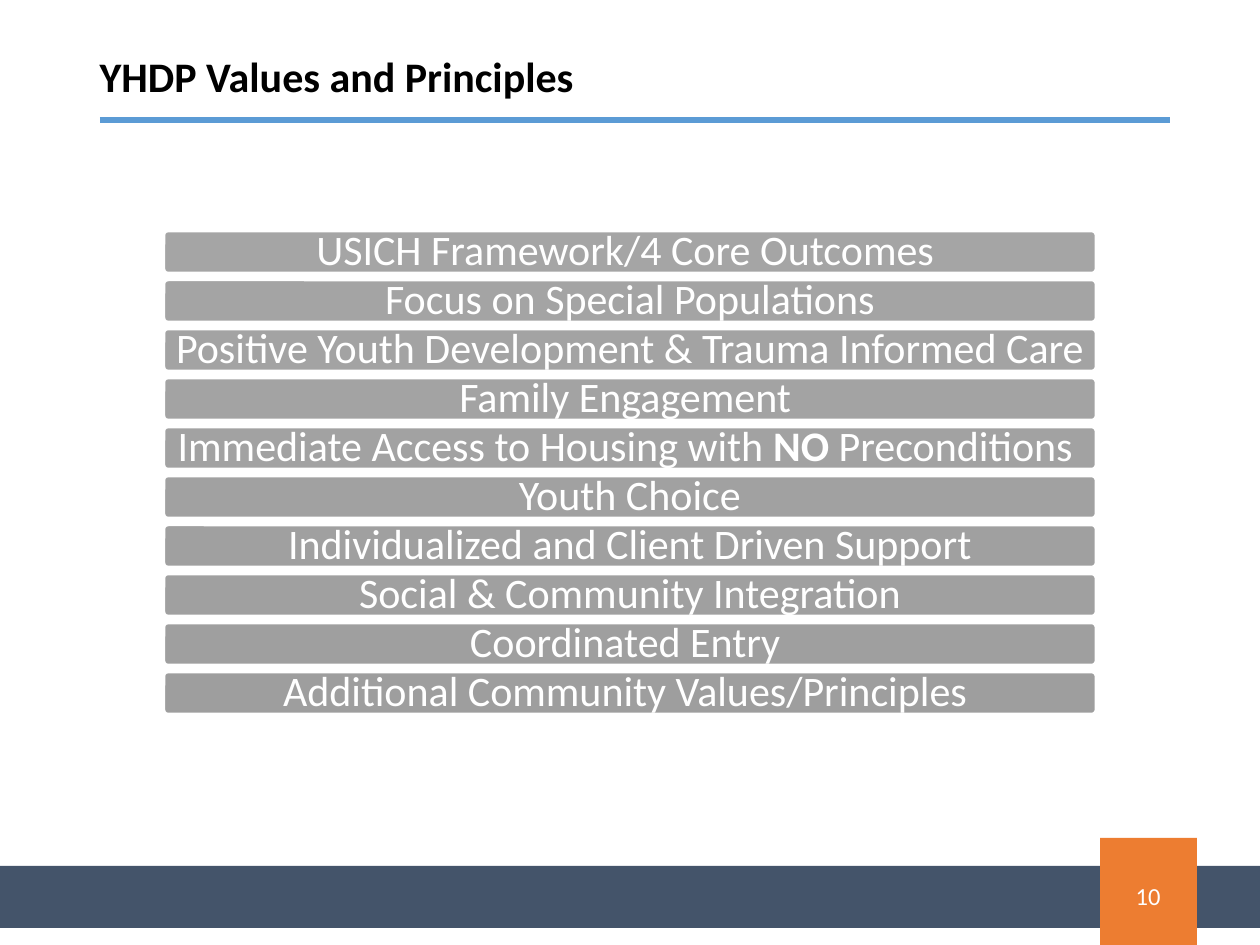
from dataclasses import dataclass

from lxml.etree import SubElement
from pptx import Presentation
from pptx.dml.color import RGBColor
from pptx.enum.shapes import MSO_CONNECTOR as Connector, MSO_SHAPE as Shape
from pptx.enum.text import MSO_ANCHOR as Anchor, PP_ALIGN as Align
from pptx.oxml.ns import qn
from pptx.util import Emu, Pt

PX_PER_INCH = 126


def px(count):
    return Emu(round(count * 914400 / PX_PER_INCH))


@dataclass(frozen=True)
class Theme:
    font: str = "Calibri"
    ink: str = "000000"
    paper: str = "FFFFFF"
    band: str = "44546A"
    badge: str = "ED7D31"
    rule: str = "5B9BD5"
    first_gray: int = 0xA5
    last_gray: int = 0x9E
    heading_size: int = 24
    number_size: int = 14


def write(frame, text, *, size, color, font, bold=False, align=Align.LEFT,
          anchor=Anchor.TOP, spacing=None, margins=None):
    """Fill a text frame with one paragraph; parts between ** are bold."""
    frame.word_wrap = True
    frame.vertical_anchor = anchor
    if margins:
        frame.margin_left = frame.margin_right = px(margins[0])
        frame.margin_top = frame.margin_bottom = px(margins[1])
    paragraph = frame.paragraphs[0]
    paragraph.alignment = align
    paragraph.line_spacing = spacing
    for index, part in enumerate(text.split("**")):
        run = paragraph.add_run()
        run.text = part
        run.font.name = font
        run.font.size = Pt(size)
        run.font.bold = bold or index % 2 == 1
        run.font.color.rgb = RGBColor.from_string(color)


class SlideBuilder:
    def __init__(self, slide, theme):
        self.slide = slide
        self.theme = theme

    def title(self, text, left, top, width, height):
        heading = self.slide.shapes.title
        heading.left, heading.top = px(left), px(top)
        heading.width, heading.height = px(width), px(height)
        write(heading.text_frame, text, size=self.theme.heading_size,
              color=self.theme.ink, font=self.theme.font, bold=True, spacing=0.9)

    def block(self, left, top, width, height, fill, kind=Shape.RECTANGLE):
        block = self.slide.shapes.add_shape(
            kind, px(left), px(top), px(width), px(height))
        block.shadow.inherit = False
        block.fill.solid()
        block.fill.fore_color.rgb = RGBColor.from_string(fill)
        block.line.fill.background()
        return block

    def rule(self, left, right, y):
        rule = self.slide.shapes.add_connector(
            Connector.STRAIGHT, px(left), px(y), px(right), px(y))
        rule.line.color.rgb = RGBColor.from_string(self.theme.rule)
        rule.line.width = Pt(3)
        SubElement(rule._element.spPr, qn("a:effectLst"))

    def principle(self, text, left, top, width, height, fill):
        bar = self.block(left, top, width, height, fill, Shape.ROUNDED_RECTANGLE)
        bar.adjustments[0] = 0.1
        bar.line.color.rgb = RGBColor.from_string(self.theme.paper)
        bar.line.width = Pt(1.5)
        write(bar.text_frame, text, size=self.theme.heading_size,
              color=self.theme.paper, font=self.theme.font, align=Align.CENTER,
              anchor=Anchor.MIDDLE, spacing=0.9, margins=(7, 6))

    def page_number(self, text, left, top, width, height):
        number = self.slide.shapes.add_textbox(
            px(left), px(top), px(width), px(height))
        write(number.text_frame, text, size=self.theme.number_size,
              color=self.theme.paper, font=self.theme.font, align=Align.RIGHT)


PRINCIPLES = [
    "USICH Framework/4 Core Outcomes ",
    "Focus on Special Populations",
    "Positive Youth Development & Trauma Informed Care",
    "Family Engagement ",
    "Immediate Access to Housing with **NO** Preconditions ",
    "Youth Choice",
    "Individualized and Client Driven Support",
    "Social & Community Integration",
    "Coordinated Entry ",
    "Additional Community Values/Principles ",
]


def main():
    deck = Presentation()
    deck.slide_width, deck.slide_height = px(1260), px(945)
    title_only = deck.slide_layouts[5]
    theme = Theme()
    page = SlideBuilder(deck.slides.add_slide(title_only), theme)

    page.block(0, 866, 1260, 62, theme.band)
    page.block(1100, 838, 97, 107, theme.badge)
    page.rule(100, 1170, 120)
    page.title("YHDP Values and Principles", 87, 50, 1086, 70)
    page.page_number("10", 890, 875, 283, 51)

    first_top, pitch = 231, 49
    gray_step = (theme.last_gray - theme.first_gray) / (len(PRINCIPLES) - 1)
    for row, principle in enumerate(PRINCIPLES):
        gray = round(theme.first_gray + row * gray_step)
        page.principle(principle, 164, first_top + row * pitch, 932, 42,
                       f"{gray:02X}" * 3)

    deck.save("out.pptx")


if __name__ == "__main__":
    main()
